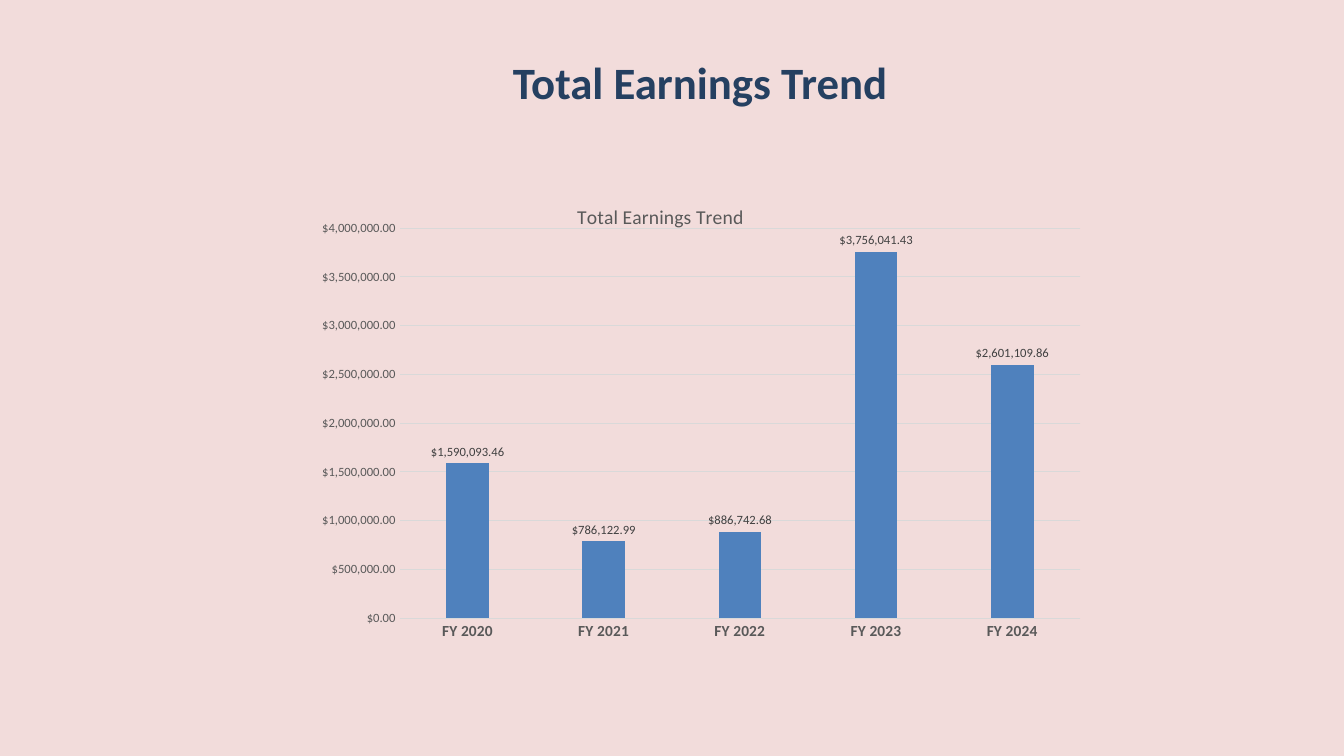
from dataclasses import dataclass

from lxml import etree
from pptx import Presentation
from pptx.chart.data import CategoryChartData
from pptx.dml.color import RGBColor
from pptx.enum.chart import XL_CHART_TYPE as ChartType
from pptx.enum.chart import XL_LABEL_POSITION as LabelPos
from pptx.enum.chart import XL_TICK_MARK as Tick
from pptx.enum.text import MSO_ANCHOR as Anchor
from pptx.enum.text import PP_ALIGN as Align
from pptx.oxml.ns import qn
from pptx.util import Emu, Pt

EMU_PER_PX = 9525
FONT = "Calibri"
HEADING = "Total Earnings Trend"
MONEY = '"$"#,##0.00'
GRAY, RULE = "595959", "D9D9D9"
EARNINGS = {
    "FY 2020": 1590093.46,
    "FY 2021": 786122.99,
    "FY 2022": 886742.68,
    "FY 2023": 3756041.43,
    "FY 2024": 2601109.86,
}


@dataclass(frozen=True)
class Box:
    left: int
    top: int
    width: int
    height: int

    def emu(self) -> tuple:
        return tuple(map(px, (self.left, self.top, self.width, self.height)))


@dataclass(frozen=True)
class Style:
    size: int
    color: str
    bold: bool = False


def px(n: int) -> Emu:
    return Emu(n * EMU_PER_PX)


def rgb(code: str) -> RGBColor:
    return RGBColor.from_string(code)


def style_font(font, style: Style) -> None:
    font.name = FONT
    font.size = Pt(style.size)
    font.bold = style.bold
    font.color.rgb = rgb(style.color)


def style_line(line) -> None:
    line.color.rgb = rgb(RULE)
    line.width = Pt(0.75)


def set_layout(parent, index: int, **values) -> None:
    """Place a chart part by fractions of the chart area."""
    for old in parent.findall(qn("c:layout")):
        parent.remove(old)
    layout = etree.Element(qn("c:layout"))
    manual = etree.SubElement(layout, qn("c:manualLayout"))
    for tag, val in values.items():
        etree.SubElement(manual, qn(f"c:{tag}")).set("val", str(val))
    parent.insert(index, layout)


def add_heading(s, box: Box) -> None:
    tf = s.shapes.add_textbox(*box.emu()).text_frame
    tf.word_wrap = True
    tf.vertical_anchor = Anchor.MIDDLE
    p = tf.paragraphs[0]
    p.text = HEADING
    p.alignment = Align.CENTER
    p.line_spacing = 0.9
    style_font(p.runs[0].font, Style(32, "254061", True))


def add_earnings_chart(s, box: Box) -> None:
    data = CategoryChartData(number_format=MONEY)
    data.categories = list(EARNINGS)
    data.add_series("Series 1", list(EARNINGS.values()))
    chart = s.shapes.add_chart(
        ChartType.COLUMN_CLUSTERED, *box.emu(), data).chart
    chart.has_legend = False
    style_font(chart.font, Style(10, "000000"))

    # Chart title
    title = chart.chart_title
    p = title.text_frame.paragraphs[0]
    p.text = HEADING
    style_font(p.runs[0].font, Style(14, GRAY))
    title.include_in_layout = False
    set_layout(title._element, 1, xMode="edge", yMode="edge", x=0.34, y=0.04)

    # Plot area and columns
    plot = chart.plots[0]
    set_layout(chart.element.find(f".//{qn('c:plotArea')}"), 0,
               layoutTarget="inner", xMode="edge", yMode="edge",
               x=0.12, y=0.1, w=0.86, h=0.82)
    plot.gap_width = 219
    plot.overlap = -27
    plot.vary_by_categories = False
    fill = plot.series[0].format.fill
    fill.solid()
    fill.fore_color.rgb = rgb("4F81BD")

    # Data labels
    labels = plot.series[0].data_labels
    labels.show_value = True
    labels.position = LabelPos.OUTSIDE_END
    labels.number_format = MONEY
    labels.number_format_is_linked = False
    style_font(labels.font, Style(9, "404040"))

    # Axes
    cat, val = chart.category_axis, chart.value_axis
    for axis, style in ((cat, Style(11, GRAY, True)), (val, Style(9, GRAY))):
        axis.major_tick_mark = axis.minor_tick_mark = Tick.NONE
        style_font(axis.tick_labels.font, style)
    style_line(cat.format.line)
    val.format.line.fill.background()
    val.minimum_scale, val.maximum_scale = 0, 4000000
    val.major_unit = 500000
    val.tick_labels.number_format = MONEY
    val.tick_labels.number_format_is_linked = False
    style_line(val.major_gridlines.format.line)


def main() -> None:
    prs = Presentation()
    prs.slide_width, prs.slide_height = px(1280), px(720)
    s = prs.slides.add_slide(prs.slide_layouts[6])
    bg = s.background.fill
    bg.solid()
    bg.fore_color.rgb = rgb("F2DCDB")
    add_heading(s, Box(115, 43, 1104, 76))
    add_earnings_chart(s, Box(290, 172, 754, 453))
    prs.save("out.pptx")


if __name__ == "__main__":
    main()
